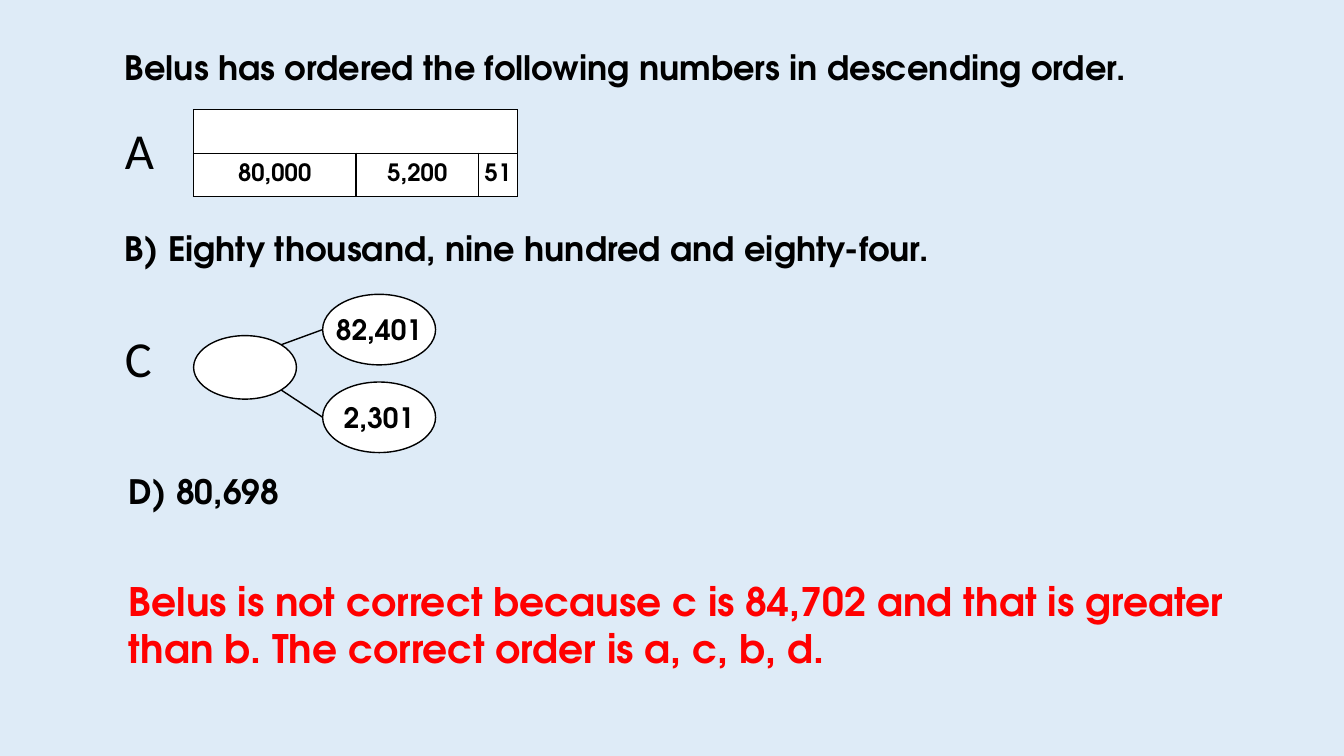
from dataclasses import dataclass

from lxml.etree import SubElement
from pptx import Presentation
from pptx.dml.color import RGBColor
from pptx.enum.shapes import MSO_CONNECTOR, MSO_SHAPE
from pptx.enum.text import MSO_ANCHOR, MSO_AUTO_SIZE, PP_ALIGN
from pptx.oxml import parse_xml
from pptx.oxml.ns import nsdecls, qn
from pptx.shapes.shapetree import GroupShapes
from pptx.slide import Slide
from pptx.table import _Cell
from pptx.text.text import TextFrame
from pptx.util import Emu, Pt

EMU_PER_PX = 9144
BLACK = RGBColor(0, 0, 0)
WHITE = RGBColor(255, 255, 255)
RED = RGBColor(255, 0, 0)
PALE_BLUE = RGBColor(0xDE, 0xEB, 0xF7)
HEADING_FONT = "TeX Gyre Adventor"
LETTER_FONT = "Calibri"
LINE_WIDTH = Pt(1)


@dataclass(frozen=True)
class Label:
    text: str
    left: int
    top: int
    width: int
    height: int
    size: int = 24
    font: str = HEADING_FONT
    color: RGBColor = BLACK
    bold: bool = True
    wrap: bool = False


@dataclass(frozen=True)
class Oval:
    text: str
    left: int
    top: int
    width: int
    height: int


@dataclass(frozen=True)
class Link:
    start: tuple[int, int]
    end: tuple[int, int]


LABELS = [
    Label("B) Eighty thousand, nine hundred and eighty-four.", 114, 221, 846, 50),
    Label("D) 80,698", 118, 462, 170, 50),
    Label("A", 114, 113, 49, 71, size=36, font=LETTER_FONT, bold=False),
    Label("C", 114, 320, 47, 71, size=36, font=LETTER_FONT, bold=False),
    Label("Belus has ordered the following numbers in descending order.",
          114, 42, 1113, 50, wrap=True),
    Label("Belus is not correct because c is 84,702 and that is greater than b. "
          "The correct order is a, c, b, d.",
          118, 568, 1135, 104, size=28, color=RED, wrap=True),
]
LINKS = [Link((320, 327), (279, 342)), Link((320, 414), (279, 387))]
OVALS = [
    Oval("82,401", 320, 292, 112, 70),
    Oval("2,301", 320, 379, 112, 70),
    Oval("", 192, 333, 102, 63),
]
BAR_PARTS = ["80,000", "5,200", "51"]
BAR_WIDTHS = [161, 122, 38]
BAR_ROW_HEIGHT = 43


def px(*lengths: int) -> list[Emu]:
    return [Emu(length * EMU_PER_PX) for length in lengths]


def apply(target: object, values: dict[str, object]) -> None:
    for name, value in values.items():
        setattr(target, name, value)


def write(frame: TextFrame, text: str, size: int, font: str = HEADING_FONT,
          color: RGBColor = BLACK, bold: bool = True,
          alignment: PP_ALIGN = PP_ALIGN.LEFT) -> None:
    paragraph = frame.paragraphs[0]
    paragraph.alignment = alignment
    run = paragraph.add_run()
    run.text = text
    apply(run.font, {"size": Pt(size), "name": font, "bold": bold})
    run.font.color.rgb = color


def add_label(slide: Slide, label: Label) -> None:
    box = slide.shapes.add_textbox(
        *px(label.left, label.top, label.width, label.height))
    apply(box.text_frame, {"word_wrap": label.wrap,
                           "auto_size": MSO_AUTO_SIZE.SHAPE_TO_FIT_TEXT})
    write(box.text_frame, label.text, label.size, label.font, label.color, label.bold)


def add_link(shapes: GroupShapes, link: Link) -> None:
    connector = shapes.add_connector(
        MSO_CONNECTOR.STRAIGHT, *px(*link.start, *link.end))
    connector.line.color.rgb = BLACK
    connector.line.width = LINE_WIDTH
    SubElement(connector._element.spPr, qn("a:effectLst"))


def add_oval(shapes: GroupShapes, oval: Oval) -> None:
    shape = shapes.add_shape(
        MSO_SHAPE.OVAL, *px(oval.left, oval.top, oval.width, oval.height))
    shape.shadow.inherit = False
    shape.fill.solid()
    shape.fill.fore_color.rgb = WHITE
    shape.line.color.rgb = BLACK
    shape.line.width = LINE_WIDTH
    if oval.text:
        apply(shape.text_frame, {"word_wrap": False,
                                 "vertical_anchor": MSO_ANCHOR.MIDDLE})
        write(shape.text_frame, oval.text, 20, alignment=PP_ALIGN.CENTER)


def format_cell(cell: _Cell) -> None:
    """Give a cell a white fill, no margins and a black border on all sides."""
    apply(cell, {"margin_left": 0, "margin_right": 0, "margin_top": 0,
                 "margin_bottom": 0, "vertical_anchor": MSO_ANCHOR.MIDDLE})
    cell.fill.solid()
    cell.fill.fore_color.rgb = WHITE
    properties = cell._tc.get_or_add_tcPr()
    for index, side in enumerate(("lnL", "lnR", "lnT", "lnB")):
        properties.insert(index, parse_xml(
            f'<a:{side} {nsdecls("a")} w="{LINE_WIDTH}"><a:solidFill>'
            f'<a:srgbClr val="{BLACK}"/></a:solidFill></a:{side}>'))


def add_bar_model(slide: Slide) -> None:
    """Draw the whole as a merged row above a row of its parts."""
    table = slide.shapes.add_table(
        2, len(BAR_PARTS), *px(192, 109, sum(BAR_WIDTHS), 2 * BAR_ROW_HEIGHT)).table
    apply(table, {"first_row": False, "horz_banding": False})
    for column, width in zip(table.columns, px(*BAR_WIDTHS)):
        column.width = width
    for row in table.rows:
        row.height = px(BAR_ROW_HEIGHT)[0]
    for cell in table.iter_cells():
        format_cell(cell)
    table.cell(0, 0).merge(table.cell(0, len(BAR_PARTS) - 1))
    for index, part in enumerate(BAR_PARTS):
        write(table.cell(1, index).text_frame, part, 17, alignment=PP_ALIGN.CENTER)


def add_part_whole_model(slide: Slide) -> None:
    group = slide.shapes.add_group_shape()
    for link in LINKS:
        add_link(group.shapes, link)
    for oval in OVALS:
        add_oval(group.shapes, oval)


def main() -> None:
    presentation = Presentation()
    presentation.slide_width, presentation.slide_height = px(1333, 750)
    slide = presentation.slides.add_slide(presentation.slide_layouts[6])
    slide.background.fill.solid()
    slide.background.fill.fore_color.rgb = PALE_BLUE
    add_bar_model(slide)
    add_part_whole_model(slide)
    for label in LABELS:
        add_label(slide, label)
    presentation.save("out.pptx")


if __name__ == "__main__":
    main()
